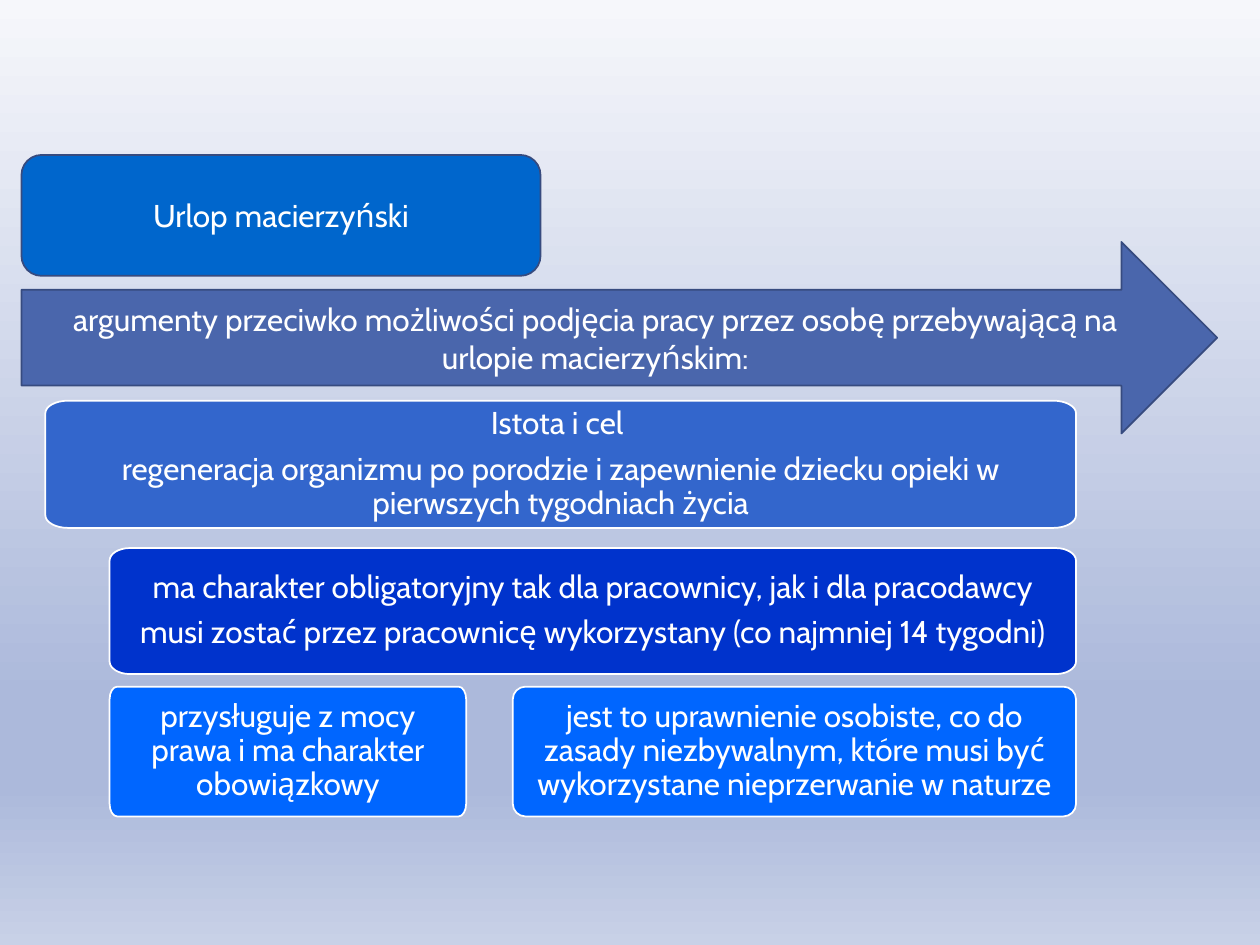
from lxml import etree
from pptx import Presentation
from pptx.dml.color import RGBColor
from pptx.enum import shapes, text
from pptx.oxml.ns import qn
from pptx.util import Inches, Pt

WHITE = RGBColor(0xFF, 0xFF, 0xFF)
NAVY = RGBColor(0x37, 0x4B, 0x7F)
HEADING_BLUE = RGBColor(0x00, 0x66, 0xCC)
ARROW_BLUE = RGBColor(0x4A, 0x66, 0xAC)
PURPOSE_BLUE = RGBColor(0x33, 0x66, 0xCC)
DUTY_BLUE = RGBColor(0x00, 0x33, 0xCC)
DETAIL_BLUE = RGBColor(0x00, 0x66, 0xFF)
BACKGROUND_STOPS = [
    (0, RGBColor(0xF6, 0xF7, 0xFB)),
    (74, RGBColor(0xAC, 0xB9, 0xDB)),
    (83, RGBColor(0xAC, 0xB9, 0xDB)),
    (100, RGBColor(0xC8, 0xD1, 0xE7)),
]


def round_corners(sp):
    """Turn every second edge of an eight-point outline into a quarter ellipse."""
    points = [(int(pt.get("x")), int(pt.get("y")))
              for pt in sp.element.iter(qn("a:pt"))]
    edges = list(sp.element.iter(qn("a:lnTo")))
    for i in range(0, len(edges), 2):
        (x0, y0), (x1, y1) = points[i], points[i + 1]
        corner_x, corner_y = (x0, y1) if i % 4 == 0 else (x1, y0)
        curve = etree.Element(qn("a:cubicBezTo"))
        controls = [(x + 0.55 * (corner_x - x), y + 0.55 * (corner_y - y))
                    for x, y in ((x0, y0), (x1, y1))]
        for x, y in controls + [(x1, y1)]:
            etree.SubElement(curve, qn("a:pt"), x=str(round(x)), y=str(round(y)))
        edges[i].getparent().replace(edges[i], curve)


class SlideBuilder:
    font = "Cabin"
    size = Pt(18)

    def __init__(self, slide):
        self.s = slide

    def background(self, stops):
        """Fill the background from top to bottom; stops are (percent, colour)."""
        fill = self.s.background.fill
        fill.gradient()
        fill.gradient_angle = 270
        gs_list = self.s.element.find(".//" + qn("a:gsLst"))
        for gs in list(gs_list):
            gs_list.remove(gs)
        for percent, color in stops:
            gs = etree.SubElement(gs_list, qn("a:gs"), pos=str(percent * 1000))
            etree.SubElement(gs, qn("a:srgbClr"), val=str(color))

    def style(self, sp, fill, line, lines):
        sp.shadow.inherit = False
        sp.fill.solid()
        sp.fill.fore_color.rgb = fill
        sp.line.color.rgb = line
        sp.line.width = Pt(1)
        tf = sp.text_frame
        tf.word_wrap = True
        tf.vertical_anchor = text.MSO_ANCHOR.MIDDLE
        tf.text = "\n".join(lines)
        for p in tf.paragraphs:
            p.alignment = text.PP_ALIGN.CENTER
            for r in p.runs:
                r.font.name = self.font
                r.font.size = self.size
                r.font.color.rgb = WHITE

    def preset(self, kind, box, fill, line):
        sp = self.s.shapes.add_shape(kind, *map(Inches, box))
        self.style(sp, fill, NAVY, [line])

    def card(self, box, radii, fill, *lines):
        """Draw a box with elliptical corners; radii are (horizontal, vertical)."""
        x, y, w, h = map(Inches, box)
        rx, ry = map(Inches, radii)
        right, bottom = x + w, y + h
        outline = self.s.shapes.build_freeform(x, y + ry)
        outline.add_line_segments([
            (x + rx, y), (right - rx, y), (right, y + ry), (right, bottom - ry),
            (right - rx, bottom), (x + rx, bottom), (x, bottom - ry)], close=True)
        sp = outline.convert_to_shape()
        round_corners(sp)
        self.style(sp, fill, WHITE, lines)
        tf = sp.text_frame
        tf.margin_left = tf.margin_right = Inches(0.08)
        tf.margin_top = tf.margin_bottom = Inches(0.08)
        for p in tf.paragraphs:
            p.line_spacing = 0.9
            p.space_after = Pt(6.3)


def main():
    prs = Presentation()
    prs.slide_width, prs.slide_height = Inches(10), Inches(7.5)
    b = SlideBuilder(prs.slides.add_slide(prs.slide_layouts[6]))
    b.background(BACKGROUND_STOPS)

    b.preset(shapes.MSO_SHAPE.ROUNDED_RECTANGLE, (0.17, 1.23, 4.12, 0.96),
             HEADING_BLUE, "Urlop macierzyński")
    b.card((0.36, 3.18, 8.18, 1.01), (0.18, 0.1), PURPOSE_BLUE,
           "Istota i cel ",
           "regeneracja organizmu po porodzie i zapewnienie dziecku opieki "
           "w pierwszych tygodniach życia")
    b.preset(shapes.MSO_SHAPE.RIGHT_ARROW, (0.17, 1.92, 9.49, 1.52), ARROW_BLUE,
             "argumenty przeciwko możliwości podjęcia pracy przez osobę "
             "przebywającą na urlopie macierzyńskim:")
    b.card((0.87, 4.35, 7.67, 1), (0.16, 0.1), DUTY_BLUE,
           "ma charakter obligatoryjny tak dla pracownicy, jak i dla pracodawcy",
           "musi zostać przez pracownicę wykorzystany (co najmniej 14 tygodni)")
    b.card((0.87, 5.45, 2.83, 1.03), (0.06, 0.1), DETAIL_BLUE,
           "przysługuje z mocy prawa i ma charakter obowiązkowy")
    b.card((4.07, 5.45, 4.47, 1.03), (0.1, 0.1), DETAIL_BLUE,
           "jest to uprawnienie osobiste, co do zasady niezbywalnym, które "
           "musi być wykorzystane nieprzerwanie w naturze")

    prs.save("out.pptx")


if __name__ == "__main__":
    main()
